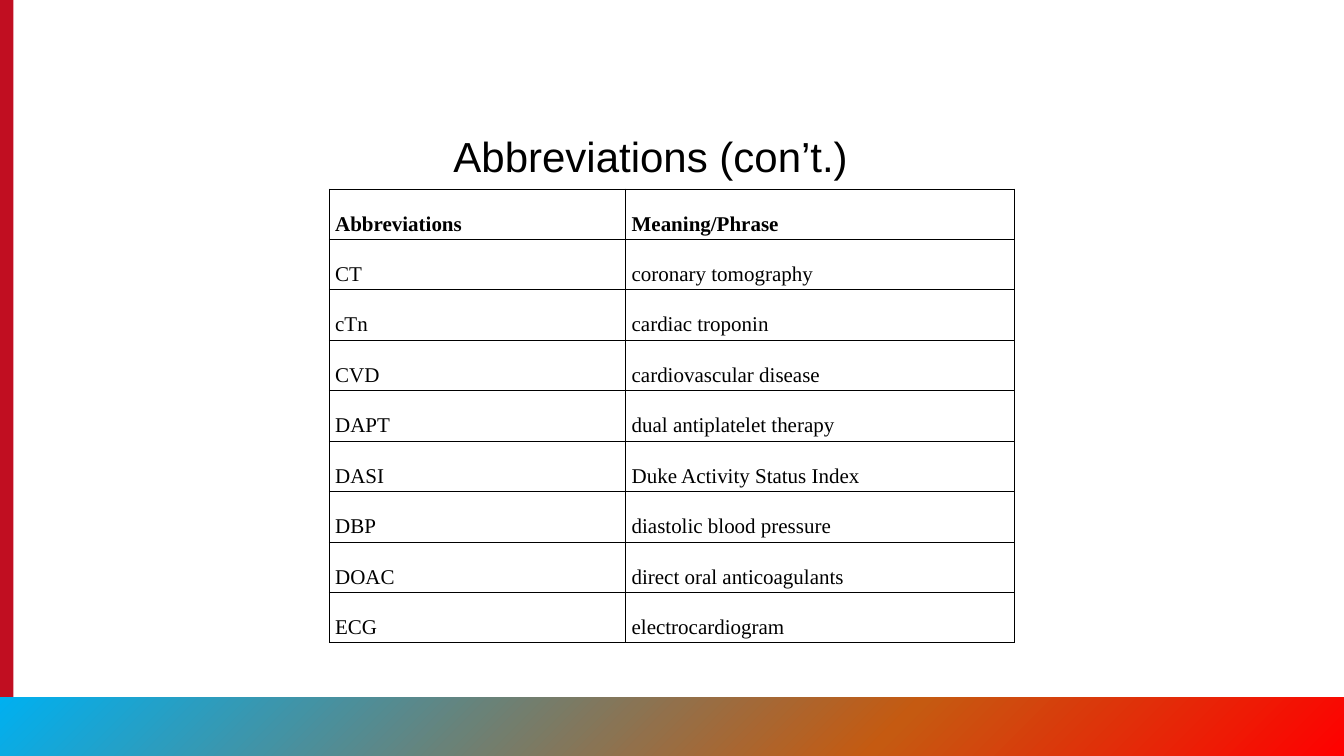
from copy import deepcopy

from lxml.etree import SubElement
from pptx import Presentation
from pptx.dml.color import RGBColor
from pptx.enum.shapes import MSO_SHAPE
from pptx.oxml.ns import qn
from pptx.util import Inches, Pt

COLORS = {
    "text": "000000",
    "border": "000000",
    "side_bar": "C10E21",
    "footer_start": "00B0F0",
    "footer_middle": "C55A11",
    "footer_end": "FF0000",
}
FOOTER_STOPS = [(0, "footer_start"), (0.66, "footer_middle"), (1, "footer_end")]
COLUMN_WIDTHS = [3.53, 4.63]
ROW_HEIGHT = 0.6
ABBREVIATIONS = [
    ("Abbreviations", "Meaning/Phrase"),
    ("CT", "coronary tomography"),
    ("cTn", "cardiac troponin"),
    ("CVD", "cardiovascular disease"),
    ("DAPT", "dual antiplatelet therapy"),
    ("DASI", "Duke Activity Status Index"),
    ("DBP", "diastolic blood pressure"),
    ("DOAC", "direct oral anticoagulants"),
    ("ECG", "electrocardiogram"),
]


def color(name):
    """Return the named colour."""
    return RGBColor.from_string(COLORS[name])


def style_font(paragraph, name, size, bold=False):
    """Set the font of a whole paragraph."""
    font = paragraph.font
    font.name = name
    font.size = Pt(size)
    font.bold = bold
    font.color.rgb = color("text")


def add_bar(page, left, top, width, height):
    """Add a rectangle without outline or shadow."""
    bar = page.shapes.add_shape(
        MSO_SHAPE.RECTANGLE, Inches(left), Inches(top), Inches(width), Inches(height)
    )
    bar.shadow.inherit = False
    bar.line.fill.background()
    return bar


def fill_gradient(bar, stops, angle):
    """Fill a bar with a linear gradient through the given stops."""
    bar.fill.gradient()
    bar.fill.gradient_angle = angle
    stop_list = bar._element.spPr.find(".//" + qn("a:gsLst"))
    while len(stop_list) < len(stops):
        stop_list.append(deepcopy(stop_list[-1]))
    for stop, (position, name) in zip(bar.fill.gradient_stops, stops):
        stop.position = position
        stop.color.rgb = color(name)


def add_title(page, text):
    """Add the slide title."""
    box = page.shapes.add_textbox(Inches(5.3), Inches(1.5), Inches(5.4), Inches(0.71))
    box.text_frame.word_wrap = True
    paragraph = box.text_frame.paragraphs[0]
    paragraph.text = text
    style_font(paragraph, "Arial", 36)


def add_borders(cell):
    """Draw a thin line on all four sides of a cell."""
    properties = cell._tc.get_or_add_tcPr()
    for index, side in enumerate(("a:lnL", "a:lnR", "a:lnT", "a:lnB")):
        line = properties.makeelement(qn(side), {"w": str(Pt(1))})
        properties.insert(index, line)
        solid = SubElement(line, qn("a:solidFill"))
        SubElement(solid, qn("a:srgbClr"), val=COLORS["border"])


def fill_cell(cell, text, bold):
    """Write and style one table cell."""
    cell.fill.background()
    cell.margin_left = cell.margin_right = Inches(0.07)
    cell.margin_top = cell.margin_bottom = 0
    paragraph = cell.text_frame.paragraphs[0]
    paragraph.text = text
    paragraph.line_spacing = 2.0
    style_font(paragraph, "Times New Roman", 18, bold)
    add_borders(cell)


def add_abbreviation_table(page):
    """Add the table of abbreviations and their meanings."""
    frame = page.shapes.add_table(
        len(ABBREVIATIONS), len(COLUMN_WIDTHS), Inches(3.92), Inches(2.25),
        Inches(sum(COLUMN_WIDTHS)), Inches(ROW_HEIGHT * len(ABBREVIATIONS)),
    )
    table = frame.table
    table.first_row = table.horz_banding = False
    for column, width in zip(table.columns, COLUMN_WIDTHS):
        column.width = Inches(width)
    for row_index, entry in enumerate(ABBREVIATIONS):
        for column_index, text in enumerate(entry):
            fill_cell(table.cell(row_index, column_index), text, row_index == 0)


def main():
    """Build the slide and save the deck."""
    deck = Presentation()
    deck.slide_width = Inches(16)
    deck.slide_height = Inches(9)
    page = deck.slides.add_slide(deck.slide_layouts[6])
    side_bar = add_bar(page, 0, 0, 0.16, 9)
    side_bar.fill.solid()
    side_bar.fill.fore_color.rgb = color("side_bar")
    footer = add_bar(page, 0, 8.3, 16, 0.7)
    fill_gradient(footer, FOOTER_STOPS, 315)
    add_title(page, "Abbreviations (con’t.)")
    add_abbreviation_table(page)
    deck.save("out.pptx")


if __name__ == "__main__":
    main()
